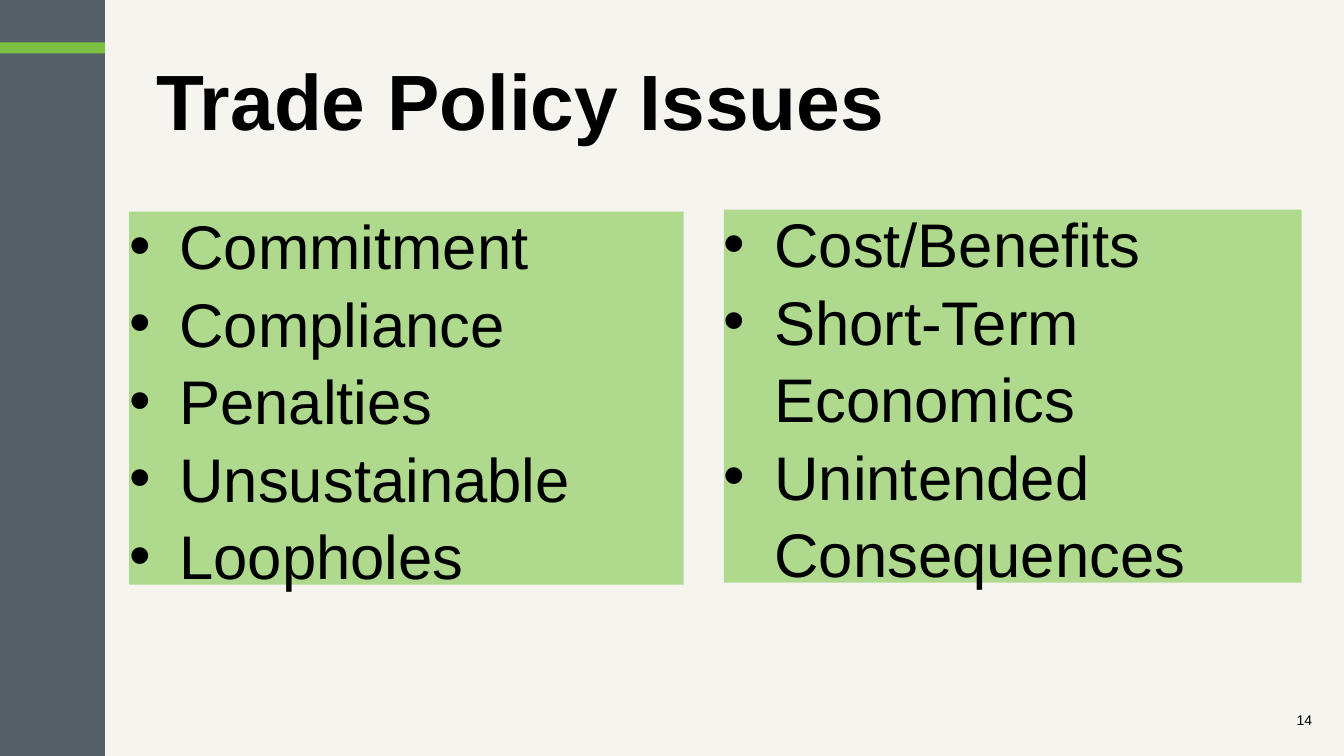
from lxml import etree
from pptx import Presentation
from pptx.dml.color import RGBColor
from pptx.enum.shapes import MSO_SHAPE as Shape
from pptx.enum.text import MSO_ANCHOR as Anchor, MSO_AUTO_SIZE as AutoSize, PP_ALIGN as Align
from pptx.oxml.ns import qn
from pptx.util import Inches, Pt

CREAM = RGBColor(0xF5, 0xF4, 0xEF)
SLATE = RGBColor(0x54, 0x5F, 0x66)
GREEN = RGBColor(0x7A, 0xC1, 0x42)
PALE_GREEN = RGBColor(0xAF, 0xDA, 0x8D)
BLACK = RGBColor(0, 0, 0)


def write(box, lines, size, bold=False, spacing=1.0, inset=0.06,
          anchor=Anchor.TOP, wrap=True, bullet=False):
    frame = box.text_frame
    frame.text = "\n".join(lines)
    frame.word_wrap = wrap
    frame.auto_size = AutoSize.NONE
    frame.vertical_anchor = anchor
    frame.margin_left = frame.margin_right = Inches(inset)
    frame.margin_top = frame.margin_bottom = Inches(inset)
    for para in frame.paragraphs:
        if bullet:
            properties = para._p.get_or_add_pPr()
            properties.set("marL", str(Inches(0.5)))
            properties.set("indent", str(Inches(-0.5)))
            etree.SubElement(properties, qn("a:buFont")).set("typeface", "Arial")
            etree.SubElement(properties, qn("a:buChar")).set("char", "•")
        para.alignment = Align.LEFT
        para.line_spacing = spacing
        for span in para.runs:
            span.font.name = "Arial"
            span.font.size = Pt(size)
            span.font.bold = bold
            span.font.color.rgb = BLACK


def add_panel(left, top, width, height, color):
    panel = page.shapes.add_shape(
        Shape.RECTANGLE, Inches(left), Inches(top), Inches(width), Inches(height))
    panel.shadow.inherit = False
    panel.fill.solid()
    panel.fill.fore_color.rgb = color
    panel.line.fill.background()
    return panel


deck = Presentation()
deck.slide_width, deck.slide_height = Inches(13.33), Inches(7.5)
page = deck.slides.add_slide(deck.slide_layouts[5])
page.background.fill.solid()
page.background.fill.fore_color.rgb = CREAM

# Side band with its accent stripe
add_panel(0, 0, 1.04, 7.5, SLATE)
add_panel(0, 0.42, 1.04, 0.11, GREEN)

# Title
title = page.shapes.title
title.left, title.top = Inches(1.49), Inches(0.42)
title.width, title.height = Inches(11.32), Inches(1.25)
write(title, ["Trade Policy Issues"], 56, bold=True, spacing=0.9, anchor=Anchor.MIDDLE)

# Two panels of issues
issue_panels = [
    (7.18, 2.08, 5.73, ["Cost/Benefits", "Short-Term Economics", "Unintended Consequences"]),
    (1.28, 2.1, 5.5, ["Commitment", "Compliance", "Penalties", "Unsustainable", "Loopholes"]),
]
for left, top, width, issues in issue_panels:
    panel = add_panel(left, top, width, 3.7, PALE_GREEN)
    write(panel, issues, 44, spacing=1.05, inset=0, anchor=Anchor.MIDDLE, bullet=True)

# Slide number
number = page.shapes.add_textbox(Inches(12.8), Inches(7), Inches(0.28), Inches(0.28))
write(number, ["14"], 10, wrap=False)

deck.save("out.pptx")
